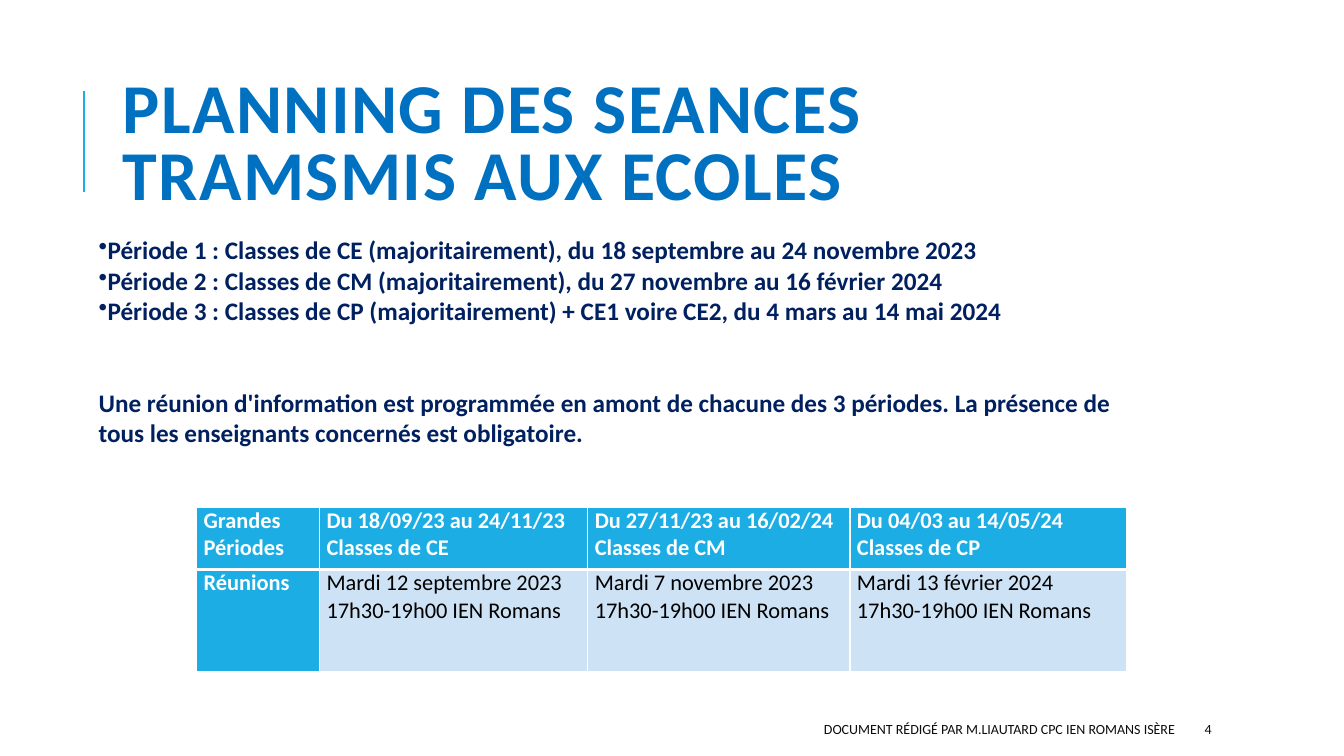
from dataclasses import dataclass

from lxml.etree import SubElement
from pptx import Presentation
from pptx.dml.color import RGBColor
from pptx.enum.shapes import MSO_CONNECTOR as Connector
from pptx.enum.text import MSO_ANCHOR as Anchor, PP_ALIGN as Align
from pptx.oxml import parse_xml
from pptx.oxml.ns import nsdecls, qn
from pptx.util import Inches, Pt


@dataclass(frozen=True)
class Theme:
    font: str = "Calibri"
    accent: str = "1CADE4"
    title: str = "0070C0"
    body: str = "002060"
    footer: str = "0D0D0D"
    band: str = "CDE3F5"
    white: str = "FFFFFF"
    black: str = "000000"
    title_size: int = 50
    body_size: int = 18
    table_size: int = 16
    footer_size: int = 10


THEME = Theme()

PERIODS = [
    "Période 1 : Classes de CE (majoritairement), du 18 septembre au 24 novembre 2023",
    "Période 2 : Classes de CM (majoritairement), du 27 novembre au 16 février 2024",
    "Période 3 : Classes de CP (majoritairement) + CE1 voire CE2, du 4 mars au 14 mai 2024",
]
NOTICE = ("Une réunion d'information est programmée en amont de chacune des 3 périodes. "
          "La présence de tous les enseignants concernés est obligatoire.")
MEETING_PLACE = "17h30-19h00 IEN Romans"
SCHEDULE = [
    ["Grandes Périodes",
     "Du 18/09/23 au 24/11/23\nClasses de CE",
     "Du 27/11/23 au 16/02/24\nClasses de CM",
     "Du 04/03 au 14/05/24\nClasses de CP"],
    ["Réunions",
     f"Mardi 12 septembre 2023\n{MEETING_PLACE}",
     f"Mardi 7 novembre 2023\n{MEETING_PLACE}",
     f"Mardi 13 février 2024\n{MEETING_PLACE}"],
]
COLUMN_WIDTHS = [1.22, 2.66, 2.6, 2.74]
ROW_HEIGHTS = [0.62, 1.01]


def style_text(frame, size, color, bold=False):
    for para in frame.paragraphs:
        for span in para.runs:
            span.font.name = THEME.font
            span.font.size = Pt(size)
            span.font.bold = bold
            span.font.color.rgb = RGBColor.from_string(color)


def add_text(page, box, text, size, color, bold=False, anchor=Anchor.MIDDLE):
    frame = page.shapes.add_textbox(*map(Inches, box)).text_frame
    frame.word_wrap = True
    frame.vertical_anchor = anchor
    frame.text = text
    style_text(frame, size, color, bold)
    return frame


def add_title(page, box):
    left, top, width, height = box
    # Accent rule left of the title
    rule_x = Inches(left - 0.29)
    rule = page.shapes.add_connector(
        Connector.STRAIGHT, rule_x, Inches(top + 1.26), rule_x, Inches(top + 0.26))
    rule.line.color.rgb = RGBColor.from_string(THEME.accent)
    rule.line.width = Pt(1.5)
    SubElement(rule._element.spPr, qn("a:effectLst"))

    frame = add_text(page, box, "PLANNING DES SEANCES TRAMSMIS AUX ECOLES",
                     THEME.title_size, THEME.title, bold=True)
    para = frame.paragraphs[0]
    para.line_spacing = 0.8
    para.runs[0].font._element.set("spc", "100")


def add_periods(page, box):
    frame = add_text(page, box, "\n".join([*PERIODS, NOTICE]),
                     THEME.body_size, THEME.body, bold=True, anchor=Anchor.TOP)
    *bullets, notice = frame.paragraphs
    for para in bullets:
        SubElement(para._p.get_or_add_pPr(), qn("a:buChar")).set("char", "•")
    notice.space_before = Pt(44)


def set_borders(cell, top, bottom):
    properties = cell._tc.get_or_add_tcPr()
    widths = {"lnL": 1, "lnR": 1, "lnT": top, "lnB": bottom}
    for index, (side, width) in enumerate(widths.items()):
        properties.insert(index, parse_xml(
            f'<a:{side} {nsdecls("a")} w="{Pt(width)}"><a:solidFill>'
            f'<a:srgbClr val="{THEME.white}"/></a:solidFill></a:{side}>'))


def add_schedule(page, box):
    table = page.shapes.add_table(
        len(ROW_HEIGHTS), len(COLUMN_WIDTHS), *map(Inches, box)).table
    for column, width in zip(table.columns, COLUMN_WIDTHS):
        column.width = Inches(width)
    for row, height in zip(table.rows, ROW_HEIGHTS):
        row.height = Inches(height)

    for row_index, texts in enumerate(SCHEDULE):
        for column_index, text in enumerate(texts):
            cell = table.cell(row_index, column_index)
            heading = row_index == 0 or column_index == 0
            cell.text = text
            cell.margin_left = cell.margin_right = Inches(0.07)
            cell.margin_top = cell.margin_bottom = 0
            cell.fill.solid()
            cell.fill.fore_color.rgb = RGBColor.from_string(
                THEME.accent if heading else THEME.band)
            style_text(cell.text_frame, THEME.table_size,
                       THEME.white if heading else THEME.black, bold=heading)
            # Thick line between the header and the meetings
            set_borders(cell, *((1, 3) if row_index == 0 else (3, 1)))


def add_footer(page, box):
    left, top, width, height = box
    number_width = 1.06
    credit_width = width - number_width - 0.1
    credit = add_text(page, (left, top, credit_width, height),
                      "DOCUMENT RÉDIGÉ PAR M.LIAUTARD CPC IEN ROMANS ISÈRE",
                      THEME.footer_size, THEME.footer)
    credit.paragraphs[0].alignment = Align.RIGHT
    add_text(page, (left + width - number_width, top, number_width, height), "4",
             THEME.footer_size, THEME.footer)


def main():
    deck = Presentation()
    deck.slide_width, deck.slide_height = Inches(13.33), Inches(7.5)
    page = deck.slides.add_slide(deck.slide_layouts[6])
    add_title(page, (1.12, 0.64, 10.63, 1.64))
    add_schedule(page, (1.95, 5.03, sum(COLUMN_WIDTHS), sum(ROW_HEIGHTS)))
    add_periods(page, (0.88, 2.28, 10.39, 2.52))
    add_footer(page, (5.3, 7.08, 7.61, 0.3))
    deck.save("out.pptx")


if __name__ == "__main__":
    main()
